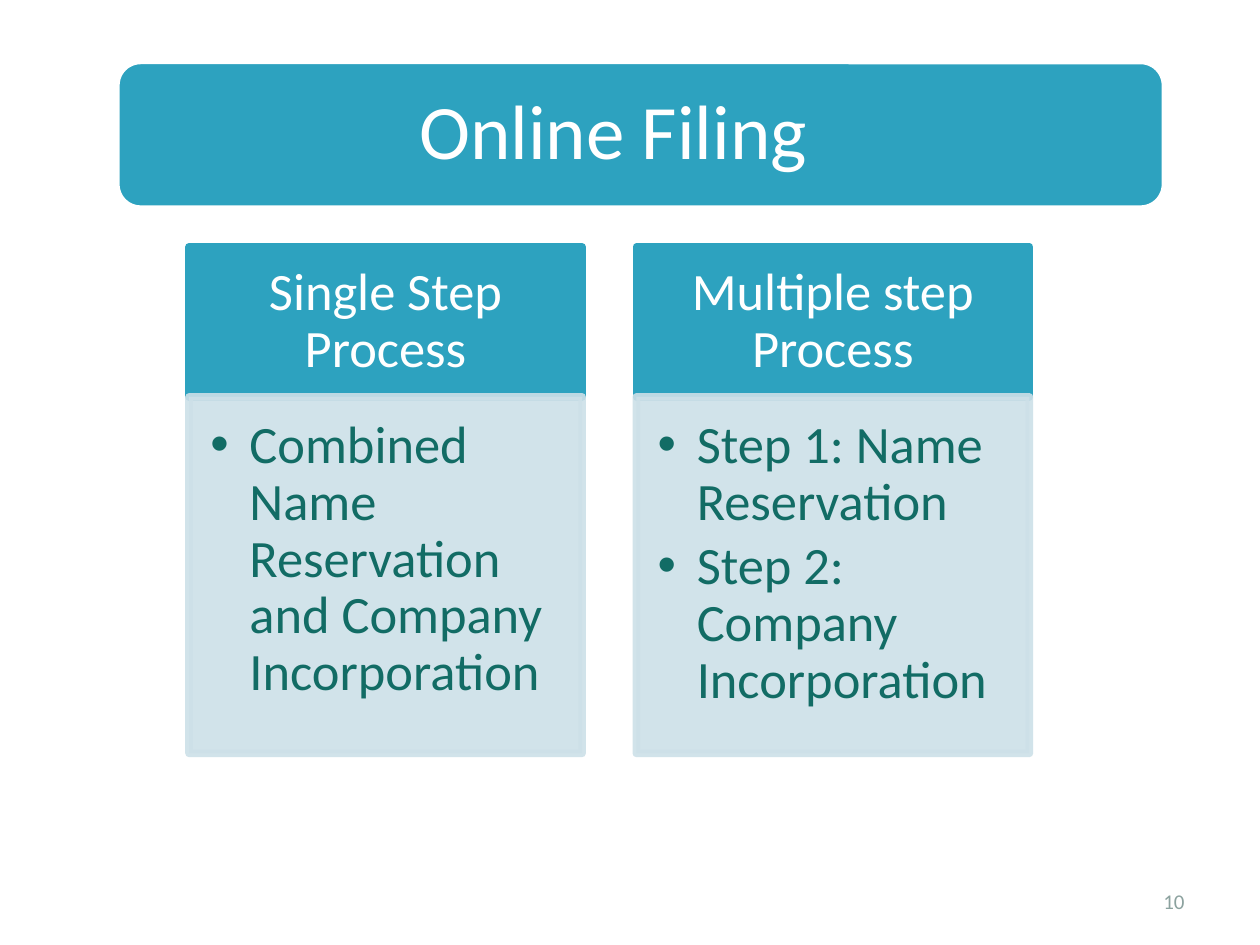
"""Build the Online Filing slide comparing the two filing processes."""
import pptx
import pptx.dml.color
import pptx.enum.shapes
import pptx.enum.text
import pptx.oxml
import pptx.oxml.ns
import pptx.util
from lxml import etree
from pptx.util import Inches

TEAL = pptx.dml.color.RGBColor(0x2D, 0xA2, 0xBF)
PALE_BLUE = pptx.dml.color.RGBColor(0xCD, 0xE0, 0xE8)
DARK_GREEN = pptx.dml.color.RGBColor(0x12, 0x6C, 0x65)
GREY = pptx.dml.color.RGBColor(0x8C, 0xA2, 0x9F)
WHITE = pptx.dml.color.RGBColor(0xFF, 0xFF, 0xFF)

SHAPE = pptx.enum.shapes.MSO_SHAPE
ALIGN = pptx.enum.text.PP_ALIGN
ANCHOR = pptx.enum.text.MSO_ANCHOR

PROCESSES = [
    ("Single Step Process",
     ["Combined Name Reservation and Company Incorporation"]),
    ("Multiple step Process",
     ["Step 1: Name Reservation", "Step 2: Company Incorporation"]),
]
COLUMN_LEFT, COLUMN_PITCH, COLUMN_WIDTH = 1.5, 3.55, 3.12
HEADER_TOP, HEADER_HEIGHT, BODY_HEIGHT = 1.96, 1.19, 2.83


def add_child(parent, tag, **attributes):
    child = etree.SubElement(parent, pptx.oxml.ns.qn(tag))
    for name, value in attributes.items():
        child.set(name, str(value))
    return child


def add_panel(slide, preset, box, fill, line, opacity=100):
    panel = slide.shapes.add_shape(preset, *map(Inches, box))
    panel.shadow.inherit = False
    panel.fill.solid()
    panel.fill.fore_color.rgb = fill
    panel.line.color.rgb = line
    panel.line.width = pptx.util.Pt(4.33)
    if opacity < 100:
        for color in panel._element.spPr.iter(pptx.oxml.ns.qn("a:srgbClr")):
            add_child(color, "a:alpha", val=opacity * 1000)
    return panel


def set_frame(frame, insets, anchor):
    frame.word_wrap = True
    frame.vertical_anchor = anchor
    (frame.margin_left, frame.margin_top,
     frame.margin_right, frame.margin_bottom) = map(Inches, insets)


def write(paragraph, text, size, color, align, spacing=0.9):
    paragraph.alignment = align
    paragraph.line_spacing = spacing
    run = paragraph.add_run()
    run.text = text
    run.font.name = "Calibri"
    run.font.size = pptx.util.Pt(size)
    run.font.color.rgb = color


def add_title(slide, text):
    banner = add_panel(slide, SHAPE.ROUNDED_RECTANGLE,
                       (0.92, 0.48, 8.33, 1.18), TEAL, WHITE)
    set_frame(banner.text_frame, (0.23, 0.23, 0.23, 0.23), ANCHOR.MIDDLE)
    paragraph = banner.text_frame.paragraphs[0]
    tabs = add_child(paragraph._p.get_or_add_pPr(), "a:tabLst")
    add_child(tabs, "a:tab", pos=Inches(2.12), algn="l")
    write(paragraph, "\t" + text, 44, WHITE, ALIGN.LEFT)


def add_header(slide, left, text):
    header = add_panel(slide, SHAPE.RECTANGLE,
                       (left, HEADER_TOP, COLUMN_WIDTH, HEADER_HEIGHT),
                       TEAL, TEAL)
    set_frame(header.text_frame, (0.23, 0.13, 0.23, 0.13), ANCHOR.MIDDLE)
    write(header.text_frame.paragraphs[0], text, 30, WHITE, ALIGN.CENTER)


def add_steps(slide, left, steps):
    body = add_panel(slide, SHAPE.RECTANGLE,
                     (left, HEADER_TOP + HEADER_HEIGHT,
                      COLUMN_WIDTH, BODY_HEIGHT),
                     PALE_BLUE, PALE_BLUE, opacity=90)
    frame = body.text_frame
    set_frame(frame, (0.17, 0.17, 0.23, 0.26), ANCHOR.TOP)
    for index, step in enumerate(steps):
        paragraph = frame.add_paragraph() if index else frame.paragraphs[0]
        paragraph.level = 1
        properties = paragraph._p.get_or_add_pPr()
        properties.set("marL", str(Inches(0.31)))
        properties.set("indent", str(Inches(-0.31)))
        add_child(properties, "a:buFont", typeface="Arial")
        add_child(properties, "a:buChar", char="•")
        paragraph.space_after = pptx.util.Pt(4.5)
        write(paragraph, step, 30, DARK_GREEN, ALIGN.LEFT)


def add_page_number(slide, number):
    box = slide.shapes.add_textbox(*map(Inches, (7.17, 6.95, 2.33, 0.4)))
    set_frame(box.text_frame, (0.1, 0.05, 0.1, 0.05), ANCHOR.MIDDLE)
    write(box.text_frame.paragraphs[0], number, 12, GREY, ALIGN.RIGHT, 1.0)


def main():
    presentation = pptx.Presentation()
    presentation.slide_width = Inches(10)
    presentation.slide_height = Inches(7.5)
    slide = presentation.slides.add_slide(presentation.slide_layouts[6])
    add_page_number(slide, "10")
    add_title(slide, "Online Filing")
    for index, (name, steps) in enumerate(PROCESSES):
        left = COLUMN_LEFT + index * COLUMN_PITCH
        add_header(slide, left, name)
        add_steps(slide, left, steps)
    presentation.save("out.pptx")


if __name__ == "__main__":
    main()
